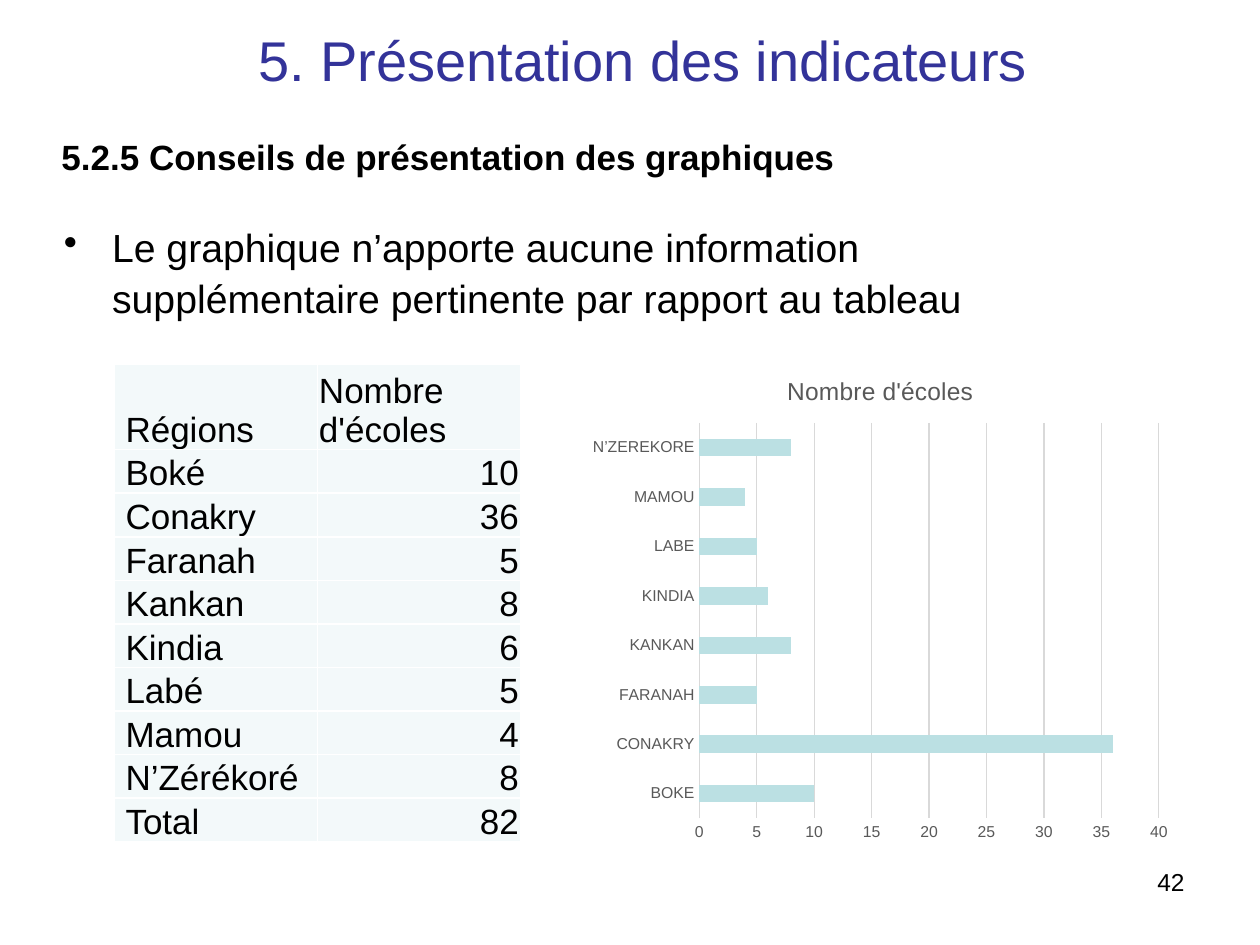
import pptx
import pptx.chart.data
import pptx.dml.color
import pptx.enum.chart
import pptx.enum.text
import pptx.oxml
import pptx.oxml.ns
import pptx.util
from pptx.util import Cm, Pt

COLORS = {"title": "333399", "text": "000000", "axis": "595959", "grid": "D9D9D9",
          "bar": "BBE0E3", "cell": "F3F9FA", "border": "FFFFFF"}
ALIGN = pptx.enum.text.PP_ALIGN
ANCHOR = pptx.enum.text.MSO_ANCHOR
NAMESPACE = pptx.oxml.ns.nsdecls("a")


def color(name):
    return pptx.dml.color.RGBColor.from_string(COLORS[name])


class SlideBuilder:
    """Holds the style and the current slide."""

    font_name = "Arial"

    def __init__(self, presentation):
        self.slide = presentation.slides.add_slide(presentation.slide_layouts[5])

    def style_font(self, font, size, color_name="text", bold=False):
        font.name = self.font_name
        font.size = Pt(size)
        font.bold = bold
        font.color.rgb = color(color_name)

    def fill_text(self, text_frame, text, size, color_name="text", bold=False,
                  align=ALIGN.LEFT):
        text_frame.text = text
        text_frame.word_wrap = True
        paragraph = text_frame.paragraphs[0]
        paragraph.alignment = align
        self.style_font(paragraph.runs[0].font, size, color_name, bold)
        return paragraph

    def indent(self, paragraph, margin, first_line):
        properties = paragraph._p.get_or_add_pPr()
        properties.set("marL", str(Cm(margin)))
        properties.set("indent", str(Cm(first_line)))
        return properties

    def title(self, text, left, top, width, height):
        shape = self.slide.shapes.title
        shape.left, shape.top, shape.width, shape.height = map(Cm, (left, top, width, height))
        paragraph = self.fill_text(shape.text_frame, text, 32, "title")
        shape.text_frame.auto_size = pptx.enum.text.MSO_AUTO_SIZE.NONE
        shape.text_frame.vertical_anchor = ANCHOR.MIDDLE
        self.indent(paragraph, 1.5, 1.75)

    def text_box(self, text, left, top, width, height, size, **style):
        shape = self.slide.shapes.add_textbox(*map(Cm, (left, top, width, height)))
        return self.fill_text(shape.text_frame, text, size, **style)

    def bullet(self, text, left, top, width, height, size):
        paragraph = self.text_box(text, left, top, width, height, size)
        paragraph.line_spacing = 1.07
        properties = self.indent(paragraph, 0.97, -0.97)
        properties.append(pptx.oxml.parse_xml(f'<a:buChar {NAMESPACE} char="•"/>'))

    def cell_borders(self, cell):
        properties = cell._tc.get_or_add_tcPr()
        for position, side in enumerate(("lnL", "lnR", "lnT", "lnB")):
            properties.insert(position, pptx.oxml.parse_xml(
                f'<a:{side} {NAMESPACE} w="{Pt(1)}"><a:solidFill>'
                f'<a:srgbClr val="{COLORS["border"]}"/></a:solidFill></a:{side}>'))

    def table(self, rows, left, top, column_width, header_height, row_height):
        height = header_height + row_height * (len(rows) - 1)
        table = self.slide.shapes.add_table(
            len(rows), 2, Cm(left), Cm(top), Cm(2 * column_width), Cm(height)).table
        for column in table.columns:
            column.width = Cm(column_width)
        for row_index, values in enumerate(rows):
            table.rows[row_index].height = Cm(row_height if row_index else header_height)
            for column_index, value in enumerate(values):
                cell = table.cell(row_index, column_index)
                is_number = row_index > 0 and column_index == 1
                self.fill_text(cell.text_frame, str(value), 20,
                               align=ALIGN.RIGHT if is_number else ALIGN.LEFT)
                cell.vertical_anchor = ANCHOR.BOTTOM
                cell.margin_left = Cm(0.03 if column_index else 0.22)
                cell.margin_right = cell.margin_top = Cm(0.03)
                cell.margin_bottom = 0
                cell.fill.solid()
                cell.fill.fore_color.rgb = color("cell")
                self.cell_borders(cell)

    def bar_chart(self, name, values, left, top, width, height):
        data = pptx.chart.data.CategoryChartData()
        data.categories = list(values)
        data.add_series(name, list(values.values()))
        chart = self.slide.shapes.add_chart(
            pptx.enum.chart.XL_CHART_TYPE.BAR_CLUSTERED,
            *map(Cm, (left, top, width, height)), data).chart
        self.style_font(chart.font, 10)
        chart.has_legend = False
        chart.has_title = True
        self.fill_text(chart.chart_title.text_frame, name, 14, "axis", align=ALIGN.CENTER)
        chart.chart_title.include_in_layout = False

        # Bars
        plot = chart.plots[0]
        plot.vary_by_categories = False
        plot.gap_width = 182
        fill = plot.series[0].format.fill
        fill.solid()
        fill.fore_color.rgb = color("bar")

        # Axes and gridlines
        for axis in (chart.category_axis, chart.value_axis):
            axis.major_tick_mark = pptx.enum.chart.XL_TICK_MARK.NONE
            axis.minor_tick_mark = pptx.enum.chart.XL_TICK_MARK.NONE
            self.style_font(axis.tick_labels.font, 9, "axis")
        value_axis = chart.value_axis
        value_axis.minimum_scale, value_axis.maximum_scale = 0, 40
        value_axis.major_unit = 5
        value_axis.format.line.fill.background()
        for line in (chart.category_axis.format.line, value_axis.major_gridlines.format.line):
            line.color.rgb = color("grid")
            line.width = Pt(0.75)


def main():
    presentation = pptx.Presentation()
    presentation.slide_width, presentation.slide_height = Cm(25.4), Cm(19.05)
    builder = SlideBuilder(presentation)

    # Headings and message
    builder.title("5. Présentation des indicateurs", 1.7, 0.46, 20.6, 1.47)
    heading = builder.text_box("5.2.5 Conseils de présentation des graphiques",
                               0.99, 2.77, 21.26, 0.94, 20, bold=True)
    heading.line_spacing = 0.8
    builder.bullet("Le graphique n’apporte aucune information supplémentaire "
                   "pertinente par rapport au tableau", 1.04, 4.32, 21.9, 1.83, 22.4)

    # Schools by region, as a chart and as a table
    schools = {"Boké": 10, "Conakry": 36, "Faranah": 5, "Kankan": 8,
               "Kindia": 6, "Labé": 5, "Mamou": 4, "N’Zérékoré": 8}
    chart_values = {region.upper().replace("É", "E"): count
                    for region, count in schools.items()}
    builder.bar_chart("Nombre d'écoles", chart_values, 11.71, 7.14, 12.07, 10.03)
    rows = [("Régions", "Nombre d'écoles"), *schools.items(),
            ("Total", sum(schools.values()))]
    builder.table(rows, 2.31, 7.34, 4.09, 1.6, 0.81)

    # Page number
    builder.text_box("42", 18.21, 17.35, 5.92, 1.32, 14, align=ALIGN.RIGHT)

    presentation.save("out.pptx")


if __name__ == "__main__":
    main()
